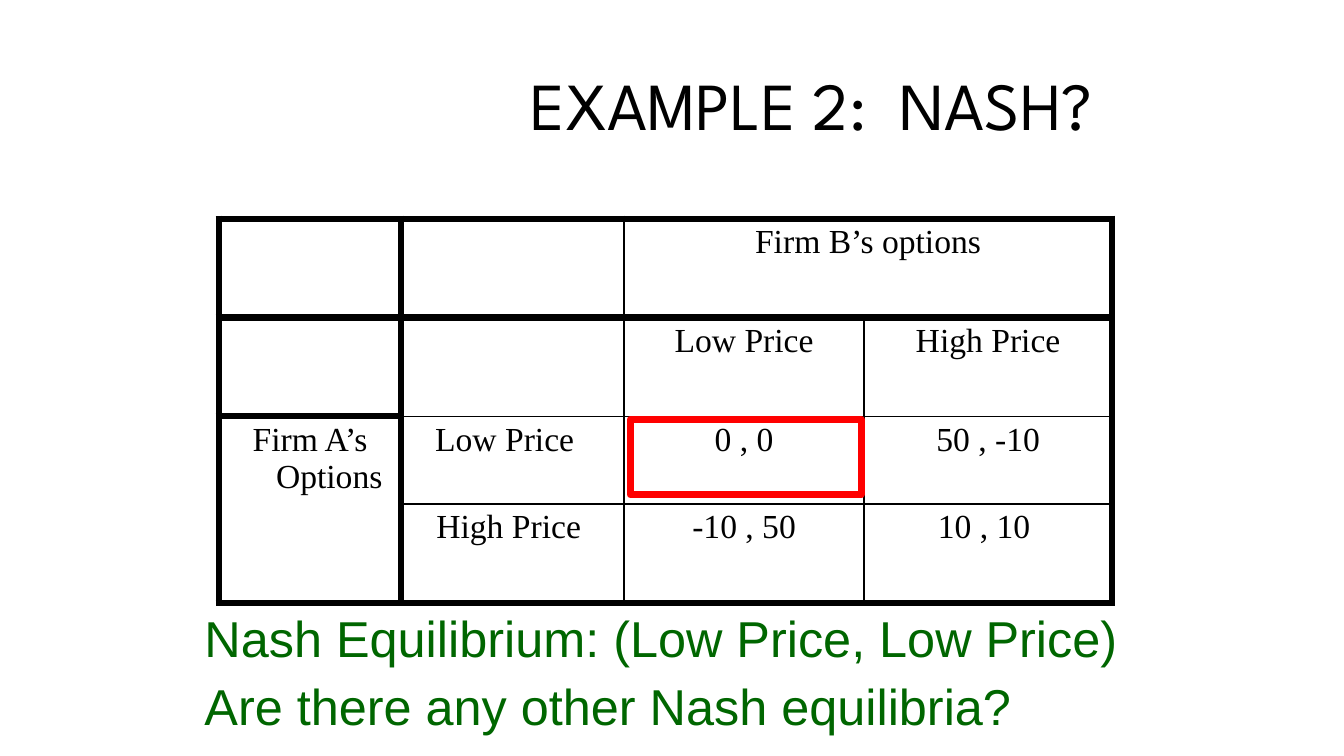
from dataclasses import dataclass

import pptx
import pptx.dml.color
import pptx.enum.shapes
import pptx.enum.text
import pptx.oxml
import pptx.oxml.ns
import pptx.util
from pptx.util import Inches

ALIGN = pptx.enum.text.PP_ALIGN
NO_GRID_STYLE = "{2D5ABB26-0587-4C30-8999-92F81FD0307C}"


@dataclass(frozen=True)
class Theme:
    black: str = "000000"
    red: str = "FF0000"
    green: str = "006600"
    title_font: str = "League Spartan"
    table_font: str = "Times New Roman"
    note_font: str = "Arial"
    title_size: int = 48
    table_size: int = 24
    note_size: int = 36
    thick: int = 5
    thin: int = 1


@dataclass(frozen=True)
class Entry:
    row: int
    col: int
    text: str
    extra_right: float = 0  # inches added to the right cell margin


THEME = Theme()
COLUMNS = [1.81, 2.21, 2.38, 2.46]
ROWS = [0.98, 0.98, 0.87, 0.98]
ENTRIES = [
    Entry(0, 2, "Firm B’s options"),
    Entry(1, 2, "Low Price"),
    Entry(1, 3, "High Price"),
    Entry(2, 0, "Firm A’s Options"),
    Entry(2, 1, "Low Price", 0.16),
    Entry(2, 2, "0 , 0"),
    Entry(2, 3, "50 , -10"),
    Entry(3, 1, "High Price", 0.08),
    Entry(3, 2, "-10 , 50"),
    Entry(3, 3, "10 , 10", 0.08),
]
NOTES = ["Nash Equilibrium: (Low Price, Low Price)",
         "Are there any other Nash equilibria?"]


def write(p, text: str, *, font: str, size: int, color: str,
          align=ALIGN.LEFT, hanging: float = 0, before: float = 0,
          spacing: float = 1.0) -> None:
    """Put formatted text into a paragraph."""
    p.alignment = align
    p.line_spacing = spacing
    if before:
        p.space_before = pptx.util.Pt(before)
    if hanging:
        pPr = p._p.get_or_add_pPr()
        pPr.set("marL", str(Inches(hanging)))
        pPr.set("indent", str(-Inches(hanging)))
    r = p.add_run()
    r.text = text
    r.font.name = font
    r.font.size = pptx.util.Pt(size)
    r.font.color.rgb = pptx.dml.color.RGBColor.from_string(color)


def add_title(slide) -> None:
    sp = slide.shapes.add_textbox(Inches(0.67), Inches(0.33), Inches(10.35), Inches(1.5))
    tf = sp.text_frame
    tf.word_wrap = True
    tf.margin_right = Inches(0.18)
    tf.vertical_anchor = pptx.enum.text.MSO_ANCHOR.MIDDLE
    write(tf.paragraphs[0], "EXAMPLE 2:  NASH?", font=THEME.title_font,
          size=THEME.title_size, color=THEME.black, align=ALIGN.RIGHT, spacing=0.9)


def set_borders(cell, row: int, col: int) -> None:
    """Thick frame and headings, thin lines between the payoffs."""
    right, bottom = col + cell.span_width, row + cell.span_height
    thick = {
        "L": col in (0, 1),
        "R": right in (1, len(COLUMNS)),
        "T": row in (0, 1) or col == 0,
        "B": bottom in (1, len(ROWS)) or col == 0,
    }
    if cell.is_spanned:  # no line inside a merged cell
        del thick["L" if row == 0 else "T"]
    tcPr = cell._tc.get_or_add_tcPr()
    for side, is_thick in thick.items():
        width = pptx.util.Pt(THEME.thick if is_thick else THEME.thin)
        tcPr.append(pptx.oxml.parse_xml(
            f'<a:ln{side} {pptx.oxml.ns.nsdecls("a")} w="{width}"><a:solidFill>'
            f'<a:srgbClr val="{THEME.black}"/></a:solidFill></a:ln{side}>'))
    cell.fill.background()


def add_payoff_table(slide) -> None:
    frame = slide.shapes.add_table(len(ROWS), len(COLUMNS), Inches(2.17), Inches(2.17),
                                   Inches(sum(COLUMNS)), Inches(sum(ROWS)))
    table = frame.table
    table.first_row = table.horz_banding = False
    table._tbl.tblPr.find(pptx.oxml.ns.qn("a:tableStyleId")).text = NO_GRID_STYLE
    for column, width in zip(table.columns, COLUMNS):
        column.width = Inches(width)
    for row, height in zip(table.rows, ROWS):
        row.height = Inches(height)
    table.cell(0, 2).merge(table.cell(0, 3))
    table.cell(2, 0).merge(table.cell(3, 0))
    for i in range(len(ROWS)):
        for j in range(len(COLUMNS)):
            set_borders(table.cell(i, j), i, j)
    for entry in ENTRIES:
        cell = table.cell(entry.row, entry.col)
        cell.margin_right = Inches(0.1 + entry.extra_right)
        write(cell.text_frame.paragraphs[0], entry.text, font=THEME.table_font,
              size=THEME.table_size, color=THEME.black, align=ALIGN.CENTER, hanging=0.38)


def add_equilibrium_box(slide) -> None:
    sp = slide.shapes.add_shape(pptx.enum.shapes.MSO_SHAPE.RECTANGLE,
                                Inches(6.25), Inches(4.16), Inches(2.29), Inches(0.75))
    sp.shadow.inherit = False
    sp.fill.background()
    sp.line.color.rgb = pptx.dml.color.RGBColor.from_string(THEME.red)
    sp.line.width = pptx.util.Pt(THEME.thick)


def add_notes_text(slide) -> None:
    sp = slide.shapes.add_textbox(Inches(1.93), Inches(5.97), Inches(10), Inches(1.4))
    tf = sp.text_frame
    tf.word_wrap = True
    for i, text in enumerate(NOTES):
        p = tf.add_paragraph() if i else tf.paragraphs[0]
        write(p, text, font=THEME.note_font, size=THEME.note_size,
              color=THEME.green, before=6 if i else 0)


def main() -> None:
    prs = pptx.Presentation()
    prs.slide_width, prs.slide_height = Inches(13.33), Inches(7.5)
    slide = prs.slides.add_slide(prs.slide_layouts[6])
    add_title(slide)
    add_payoff_table(slide)
    add_equilibrium_box(slide)
    add_notes_text(slide)
    prs.save("out.pptx")


if __name__ == "__main__":
    main()
